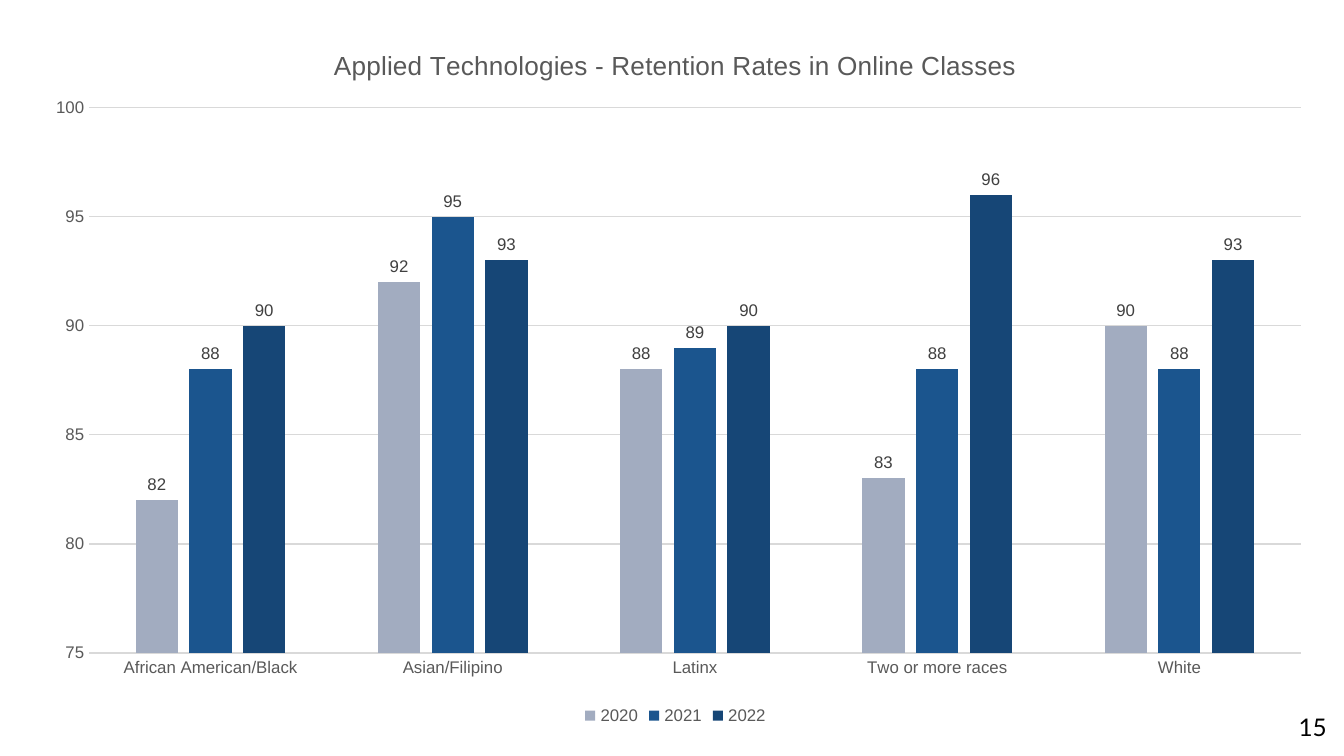
from typing import NamedTuple

from lxml.etree import SubElement
from pptx import Presentation
from pptx.chart.chart import Chart
from pptx.chart.data import CategoryChartData
from pptx.dml.color import RGBColor
from pptx.enum.chart import (XL_CHART_TYPE, XL_LABEL_POSITION,
                             XL_LEGEND_POSITION, XL_TICK_MARK)
from pptx.enum.text import MSO_ANCHOR, PP_ALIGN
from pptx.oxml.ns import qn
from pptx.text.text import Font
from pptx.util import Pt

BLACK = RGBColor(0x00, 0x00, 0x00)
AXIS_GRAY = RGBColor(0x59, 0x59, 0x59)
LABEL_GRAY = RGBColor(0x40, 0x40, 0x40)
GRID_GRAY = RGBColor(0xD9, 0xD9, 0xD9)
PALE_BLUE = RGBColor(0xA2, 0xAC, 0xC0)
MID_BLUE = RGBColor(0x1B, 0x55, 0x8E)
DARK_BLUE = RGBColor(0x16, 0x46, 0x76)


class YearRates(NamedTuple):
    year: str
    rates: tuple[int, ...]
    color: RGBColor


GROUPS = ("African American/Black", "Asian/Filipino", "Latinx",
          "Two or more races", "White")
YEARS = (
    YearRates("2020", (82, 92, 88, 83, 90), PALE_BLUE),
    YearRates("2021", (88, 95, 89, 88, 88), MID_BLUE),
    YearRates("2022", (90, 93, 90, 96, 93), DARK_BLUE),
)
PLOT_LAYOUT = {"x": 0.05, "y": 0.12, "w": 0.93, "h": 0.77}


def style_font(font: Font, size: float, color: RGBColor, name: str = "Arial") -> None:
    font.size = Pt(size)
    font.name = name
    font.bold = False
    font.color.rgb = color


def place_plot(chart: Chart) -> None:
    """Fix the inner plot area as fractions of the chart frame."""
    plot_area = chart.element.find(".//" + qn("c:plotArea"))
    for old_layout in plot_area.findall(qn("c:layout")):
        plot_area.remove(old_layout)
    layout = SubElement(plot_area, qn("c:layout"))
    plot_area.insert(0, layout)
    manual = SubElement(layout, qn("c:manualLayout"))
    settings = {"layoutTarget": "inner", "xMode": "edge", "yMode": "edge", **PLOT_LAYOUT}
    for tag, value in settings.items():
        SubElement(manual, qn(f"c:{tag}")).set("val", str(value))


def style_axes(chart: Chart) -> None:
    groups, rates = chart.category_axis, chart.value_axis
    for axis in (groups, rates):
        axis.major_tick_mark = axis.minor_tick_mark = XL_TICK_MARK.NONE
        style_font(axis.tick_labels.font, 9, AXIS_GRAY)
    rates.minimum_scale, rates.maximum_scale, rates.major_unit = 75, 100, 5
    rates.format.line.fill.background()
    for line in (groups.format.line, rates.major_gridlines.format.line):
        line.color.rgb = GRID_GRAY
        line.width = Pt(0.75)


def style_bars(chart: Chart) -> None:
    plot = chart.plots[0]
    plot.vary_by_categories = False
    plot.gap_width, plot.overlap = 219, -27
    for bars, year in zip(plot.series, YEARS):
        bars.format.fill.solid()
        bars.format.fill.fore_color.rgb = year.color
        labels = bars.data_labels
        labels.show_value = True
        labels.position = XL_LABEL_POSITION.OUTSIDE_END
        style_font(labels.font, 9, LABEL_GRAY)


presentation = Presentation()
presentation.slide_width, presentation.slide_height = Pt(720), Pt(405)
slide = presentation.slides.add_slide(presentation.slide_layouts[6])

# Page number
page_box = slide.shapes.add_textbox(Pt(667.5), Pt(373.7), Pt(43.2), Pt(31))
page_frame = page_box.text_frame
page_frame.word_wrap = True
page_frame.vertical_anchor = MSO_ANCHOR.MIDDLE
page_frame.margin_left = page_frame.margin_right = Pt(0)
page_frame.margin_top = page_frame.margin_bottom = Pt(0)
page_number = page_frame.paragraphs[0]
page_number.text = "15"
page_number.alignment = PP_ALIGN.RIGHT
style_font(page_number.font, 13, BLACK, "Lato")

# Retention chart
retention = CategoryChartData(number_format="0")
retention.categories = GROUPS
for year in YEARS:
    retention.add_series(year.year, year.rates)
chart = slide.shapes.add_chart(XL_CHART_TYPE.COLUMN_CLUSTERED, Pt(13), Pt(12.2),
                               Pt(697.7), Pt(379.4), retention).chart
style_font(chart.font, 10, BLACK)
place_plot(chart)
style_axes(chart)
style_bars(chart)

# Title and legend
chart.has_title = True
chart.chart_title.include_in_layout = False
title = chart.chart_title.text_frame.paragraphs[0]
title.text = "Applied Technologies - Retention Rates in Online Classes"
style_font(title.font, 14, AXIS_GRAY)
chart.has_legend = True
chart.legend.position = XL_LEGEND_POSITION.BOTTOM
chart.legend.include_in_layout = False
style_font(chart.legend.font, 9, AXIS_GRAY)

presentation.save("out.pptx")
